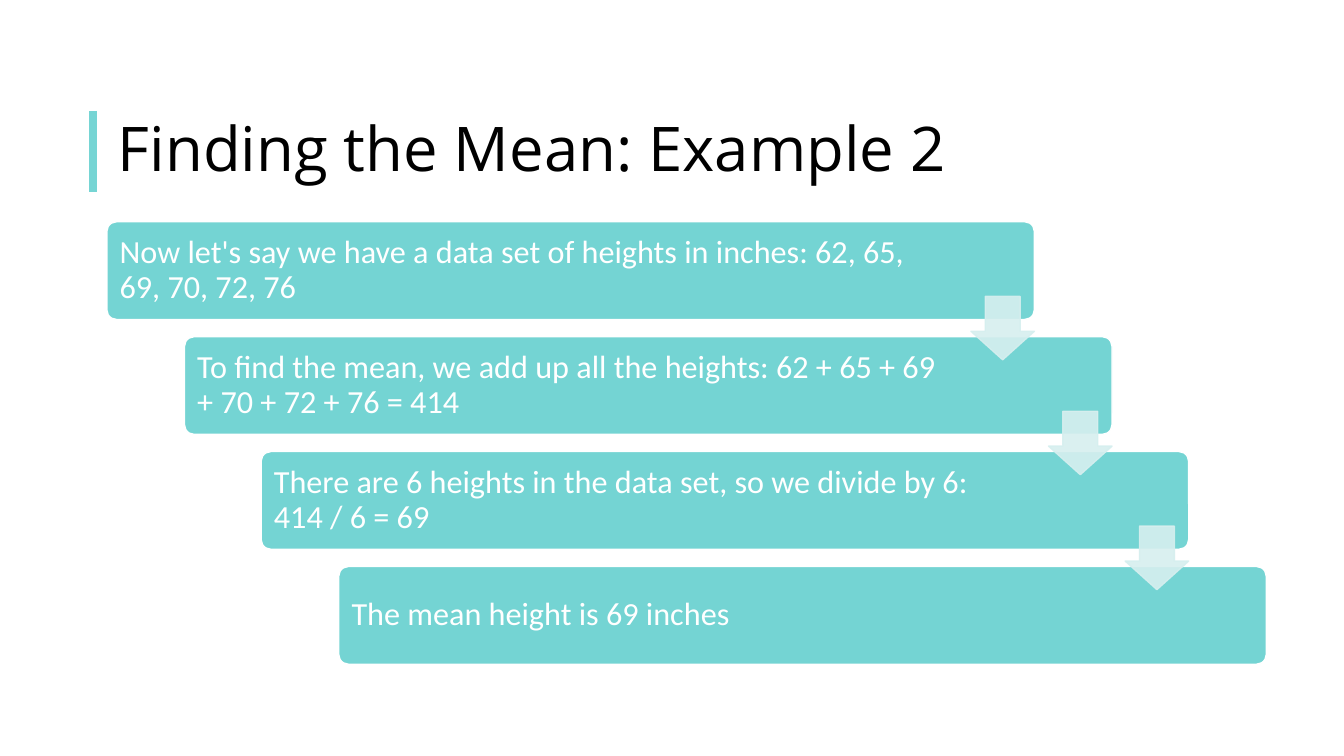
"""Build the slide that works through a mean in four descending steps."""
from dataclasses import dataclass

import lxml.etree
import pptx
import pptx.dml.color
import pptx.enum.shapes
import pptx.enum.text
import pptx.oxml.ns
import pptx.util

PX = 9144
SHAPE = pptx.enum.shapes.MSO_SHAPE
ALIGN = pptx.enum.text.PP_ALIGN
ANCHOR = pptx.enum.text.MSO_ANCHOR

STEPS = [
    ("Now let's say we have a data set of heights in inches: 62, 65, 69, 70, 72, 76", 116),
    ("To find the mean, we add up all the heights: 62 + 65 + 69 + 70 + 72 + 76 = 414", 149),
    ("There are 6 heights in the data set, so we divide by 6: 414 / 6 = 69", 149),
    ("The mean height is 69 inches", 149),
]
STEP_LEFT, STEP_TOP, STEP_WIDTH, STEP_HEIGHT = 106, 220, 920, 97
SHIFT_X, SHIFT_Y = 230 / 3, 114
ARROW_LEFT, ARROW_TOP, ARROW_SIZE = 963, 294, 63


@dataclass(frozen=True)
class Theme:
    """Hold the colours, fonts and type sizes of the slide."""
    accent: str = "76D5D4"
    step: str = "74D4D3"
    arrow: str = "D6EFEF"
    light: str = "FFFFFF"
    dark: str = "000000"
    title_font: str = "Open Sans"
    body_font: str = "Calibri"
    title_size: int = 44
    body_size: int = 23


THEME = Theme()


def rgb(colour):
    """Turn a hex string into a colour."""
    return pptx.dml.color.RGBColor.from_string(colour)


def px(*lengths):
    """Turn px lengths into EMU."""
    return [pptx.util.Emu(round(n) * PX) for n in lengths]


def set_attrs(target, values):
    """Set each named attribute on the target."""
    for name, value in values.items():
        setattr(target, name, value)


def add_xml(parent, tag, **attributes):
    """Append a child element to an XML parent."""
    lxml.etree.SubElement(parent, pptx.oxml.ns.qn(tag), **attributes)


def write_text(tf, text, font, size, colour, margins):
    """Write one left-aligned, vertically centred paragraph."""
    left, top, right, bottom = px(*margins)
    set_attrs(tf, {"word_wrap": True, "vertical_anchor": ANCHOR.MIDDLE,
                   "margin_left": left, "margin_top": top,
                   "margin_right": right, "margin_bottom": bottom})
    p = tf.paragraphs[0]
    set_attrs(p, {"alignment": ALIGN.LEFT, "line_spacing": 0.9})
    r = p.add_run()
    r.text = text
    set_attrs(r.font, {"name": font, "size": pptx.util.Pt(size)})
    r.font.color.rgb = rgb(colour)


def add_title(s, text, box):
    """Fill and place the title placeholder."""
    sp = s.shapes.title
    set_attrs(sp, dict(zip(("left", "top", "width", "height"), px(*box))))
    write_text(sp.text_frame, text, THEME.title_font, THEME.title_size,
               THEME.dark, (10, 5, 10, 5))


def add_rule(s, x, top, bottom):
    """Draw the vertical accent line beside the title."""
    line = s.shapes.add_connector(pptx.enum.shapes.MSO_CONNECTOR.STRAIGHT,
                                  *px(x, top, x, bottom))
    line.line.color.rgb = rgb(THEME.accent)
    line.line.width = pptx.util.Pt(6)
    add_xml(line._element.spPr, "a:effectLst")


def add_block(s, kind, box, adjustments, fill, outline):
    """Add a flat preset shape with a one-point outline."""
    sp = s.shapes.add_shape(kind, *px(*box))
    for i, value in enumerate(adjustments):
        sp.adjustments[i] = value
    sp.shadow.inherit = False
    sp.fill.solid()
    sp.fill.fore_color.rgb = rgb(fill)
    sp.line.color.rgb = rgb(outline)
    sp.line.width = pptx.util.Pt(1)
    return sp


def add_step(s, i, text, right_margin):
    """Add one step of the staircase with its text."""
    box = (STEP_LEFT + i * SHIFT_X, STEP_TOP + i * SHIFT_Y, STEP_WIDTH, STEP_HEIGHT)
    sp = add_block(s, SHAPE.ROUNDED_RECTANGLE, box, (0.1,), THEME.step, THEME.light)
    write_text(sp.text_frame, text, THEME.body_font, THEME.body_size,
               THEME.light, (10, 10, right_margin, 10))


def add_arrow(s, i):
    """Add the translucent arrow from one step to the next."""
    box = (ARROW_LEFT + i * SHIFT_X, ARROW_TOP + i * SHIFT_Y, ARROW_SIZE, ARROW_SIZE)
    sp = add_block(s, SHAPE.DOWN_ARROW, box, (0.55, 0.45), THEME.arrow, THEME.arrow)
    for colour in sp._element.spPr.findall(".//" + pptx.oxml.ns.qn("a:srgbClr")):
        add_xml(colour, "a:alpha", val="90000")


def main():
    """Build and save the slide."""
    prs = pptx.Presentation()
    prs.slide_width, prs.slide_height = px(1333, 750)
    s = prs.slides.add_slide(prs.slide_layouts[5])
    add_rule(s, 92, 110, 190)
    add_title(s, "Finding the Mean: Example 2", (107, 110, 1150, 80))
    for i, (text, right_margin) in enumerate(STEPS):
        add_step(s, i, text, right_margin)
    for i in range(len(STEPS) - 1):
        add_arrow(s, i)
    prs.save("out.pptx")


if __name__ == "__main__":
    main()
